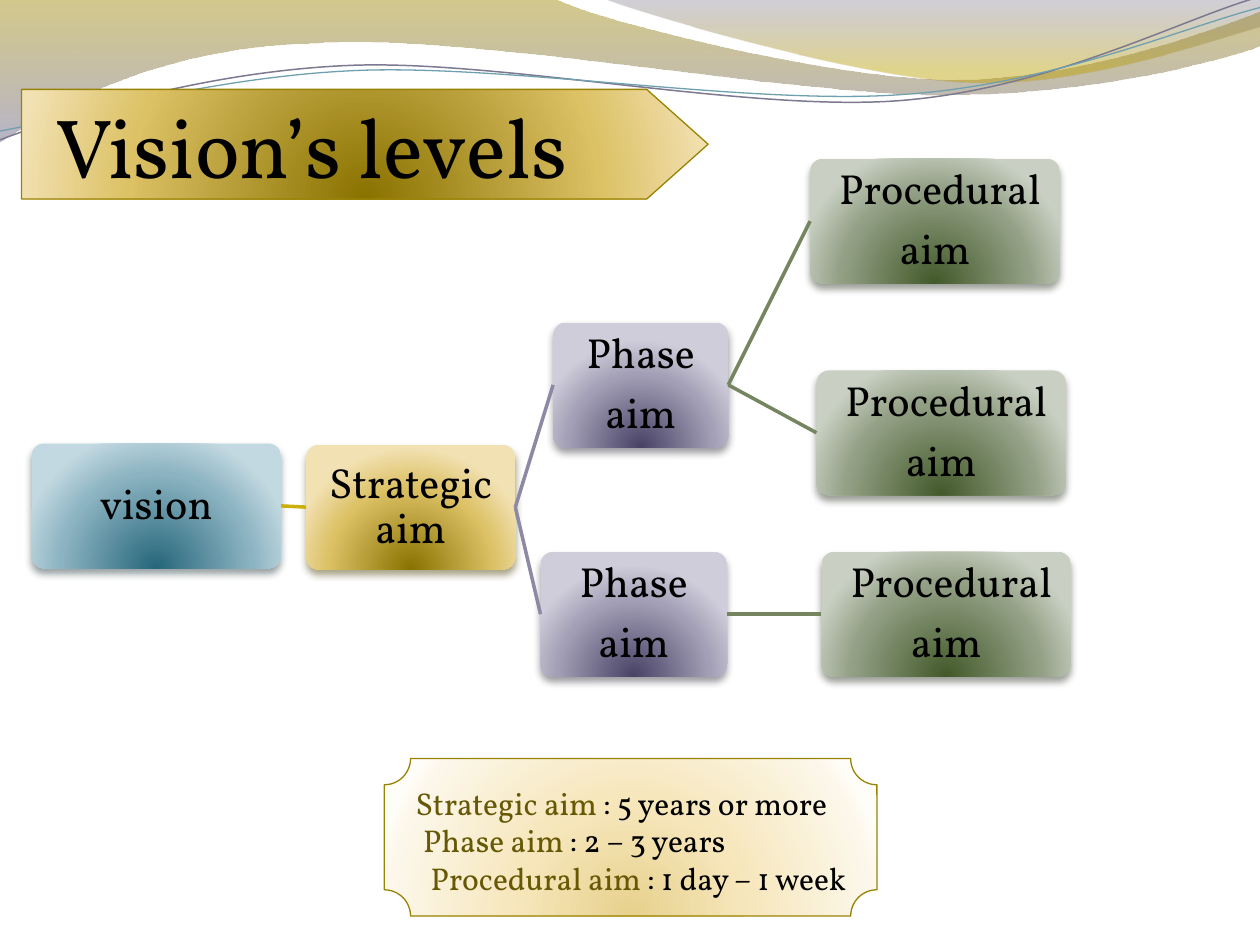
from dataclasses import dataclass

from lxml.etree import SubElement
from pptx import Presentation
from pptx.dml.color import RGBColor
from pptx.enum.shapes import MSO_CONNECTOR, MSO_SHAPE
from pptx.enum.text import MSO_ANCHOR, PP_ALIGN
from pptx.oxml.ns import qn
from pptx.util import Inches, Pt

FONT = "Vollkorn"
BLACK = RGBColor(0x00, 0x00, 0x00)
OLIVE = RGBColor(0x66, 0x58, 0x05)
GOLD_EDGE = RGBColor(0x99, 0x83, 0x05)
WAVE_PURPLE = RGBColor(0x7C, 0x79, 0x91)
WAVE_BLUE = RGBColor(0x6E, 0xA0, 0xB0)
LEFT_SITE, RIGHT_SITE = 1, 3


@dataclass(frozen=True)
class Stop:
    position: int
    color: RGBColor
    opacity: int = 100


@dataclass(frozen=True)
class Theme:
    stops: tuple
    shadow: RGBColor
    link: RGBColor


@dataclass(frozen=True)
class Level:
    name: str
    parent: str
    lines: tuple
    theme: Theme
    left: float
    top: float
    width: float
    indent: float = 0


def make_theme(dark: str, middle: str, light: str, shadow: str, link: str) -> Theme:
    colors = [RGBColor.from_string(value) for value in (dark, middle, light)]
    stops = tuple(Stop(at, color) for at, color in zip((0, 68, 100), colors))
    return Theme(stops, RGBColor.from_string(shadow), RGBColor.from_string(link))


BLUE = make_theme("26667B", "8BB3C1", "C3D9E1", "26383E", "6EA0B0")
GOLD = make_theme("8A7200", "DCC165", "F2E1B2", "493F02", "CCAF0A")
PURPLE = make_theme("484266", "A39FB6", "CFCDDA", "31303A", "8D89A4")
GREEN = make_theme("43592A", "93A085", "C9D0C3", "292F21", "748560")
CREAM_STOPS = (Stop(0, RGBColor(0xE7, 0xD1, 0x8D)), Stop(43, RGBColor(0xF6, 0xE6, 0xBA)),
               Stop(93, RGBColor(0xFC, 0xF7, 0xEA)), Stop(100, RGBColor(0xFF, 0xFD, 0xF7)))
GOLD_WAVE_STOPS = (Stop(0, RGBColor(0x9E, 0x87, 0x00), 45),
                   Stop(100, RGBColor(0x7B, 0x76, 0x9C), 55))
PURPLE_WAVE_STOPS = (Stop(0, RGBColor(0x66, 0x62, 0x7C), 30),
                     Stop(80, RGBColor(0xBD, 0xA1, 0x00), 45))

# Wave outlines: a pair is a line end, six numbers are a cubic curve
GOLD_WAVE = [(0, 0), (4.4, -0.01), (4.76, 0.17, 6.64, 0.63, 7.58, 0.63),
             (8.53, 0.63, 9.58, 0.26, 10, 0.09), (10.01, 0.36),
             (9.83, 0.44, 8.7, 0.76, 7.46, 0.75), (6.22, 0.75, 3.82, 0.28, 2.57, 0.34),
             (1.29, 0.36, 0.46, 0.83, -0.01, 1.13), (0, 0)]
PURPLE_WAVE = [(4.79, -0.01), (5.09, 0.11, 6.82, 0.62, 7.69, 0.65),
               (8.56, 0.69, 9.61, 0.32, 10, 0.21), (10, 0), (4.79, -0.01)]
PURPLE_LINE = [(0, 1.11), (0.48, 0.93, 1.58, 0.57, 2.77, 0.52),
               (3.95, 0.47, 5.93, 0.89, 7.13, 0.8), (8.33, 0.71, 9.38, 0.15, 9.98, -0.02)]
BLUE_LINE = [(0, 1.04), (0.47, 0.96, 1.64, 0.61, 2.83, 0.56),
             (4.03, 0.51, 5.97, 0.84, 7.17, 0.75), (8.36, 0.67, 9.41, 0.21, 10, 0.06)]

PHASE, PROCEDURAL = ("Phase", "aim"), ("Procedural", "aim")
LEVELS = [
    Level("vision", "", ("vision",), BLUE, 0.25, 3.52, 1.98),
    Level("strategic", "vision", ("Strategic aim",), GOLD, 2.43, 3.53, 1.66),
    Level("phase 1", "strategic", PHASE, PURPLE, 4.39, 2.56, 1.39),
    Level("procedural 1", "phase 1", PROCEDURAL, GREEN, 6.43, 1.26, 1.98, 0.08),
    Level("procedural 2", "phase 1", PROCEDURAL, GREEN, 6.48, 2.94, 1.98, 0.08),
    Level("phase 2", "strategic", PHASE, PURPLE, 4.29, 4.38, 1.48),
    Level("procedural 3", "phase 2", PROCEDURAL, GREEN, 6.52, 4.38, 1.98, 0.08),
]
LEVEL_HEIGHT = 0.99
LEGEND = [("Strategic aim ", ": 5 years or more"), ("Phase aim ", ": 2 – 3 years"),
          ("Procedural aim ", ": 1 day – 1 week")]


def add_color(parent, color: RGBColor, opacity: int) -> None:
    node = SubElement(parent, qn("a:srgbClr"), val=str(color))
    if opacity < 100:
        SubElement(node, qn("a:alpha"), val=str(opacity * 1000))


def fill_gradient(shape, stops: tuple, radial: bool = True) -> None:
    shape.fill.solid()
    solid = shape._element.spPr.find(qn("a:solidFill"))
    gradient = solid.makeelement(qn("a:gradFill"), rotWithShape="1")
    stop_list = SubElement(gradient, qn("a:gsLst"))
    for stop in stops:
        node = SubElement(stop_list, qn("a:gs"), pos=str(stop.position * 1000))
        add_color(node, stop.color, stop.opacity)
    if radial:
        center = SubElement(gradient, qn("a:path"), path="circle")
        SubElement(center, qn("a:fillToRect"), l="50000", t="130000", r="50000", b="-30000")
    else:
        SubElement(gradient, qn("a:lin"), ang="5400000", scaled="1")
    solid.getparent().replace(solid, gradient)


def set_line(shape, color: RGBColor | None, width: float = 0.75) -> None:
    if color is None:
        shape.line.fill.background()
    else:
        shape.line.color.rgb = color
        shape.line.width = Pt(width)


def add_shadow(shape, color: RGBColor) -> None:
    effects = shape._element.spPr.find(qn("a:effectLst"))
    shadow = SubElement(effects, qn("a:outerShdw"), blurRad=str(Pt(4.5)), dist=str(Pt(3)),
                        dir="5400000", rotWithShape="0")
    add_color(shadow, color, 48)


def bend_segments(wave, outline: list) -> None:
    """Join the three straight steps of each curve into one cubic curve."""
    segments = iter(list(wave._element.iter(qn("a:lnTo"))))
    for piece in outline[1:]:
        first = next(segments)
        if len(piece) == 2:
            continue
        curve = first.makeelement(qn("a:cubicBezTo"))
        first.addprevious(curve)
        for segment in (first, next(segments), next(segments)):
            curve.append(segment[0])
            segment.getparent().remove(segment)


def add_wave(page, outline: list, stops: tuple = (), color: RGBColor | None = None,
             width: float = 0.75) -> None:
    points = [(Inches(piece[at]), Inches(piece[at + 1]))
              for piece in outline for at in range(0, len(piece), 2)]
    builder = page.shapes.build_freeform(*points[0])
    builder.add_line_segments(points[1:], close=bool(stops))
    wave = builder.convert_to_shape()
    bend_segments(wave, outline)
    wave.shadow.inherit = False
    if stops:
        fill_gradient(wave, stops, radial=False)
    else:
        wave.fill.background()
    set_line(wave, color, width)


def add_panel(page, preset, area: tuple, stops: tuple, edge: RGBColor | None = None,
              adjust: float | None = None):
    box = page.shapes.add_shape(preset, *map(Inches, area))
    box.shadow.inherit = False
    fill_gradient(box, stops)
    set_line(box, edge)
    if adjust is not None:
        box.adjustments[0] = adjust
    return box


def write(para, text: str, *, size: float, color: RGBColor = BLACK, align=PP_ALIGN.LEFT,
          indent: float = 0) -> None:
    para.alignment = align
    if indent:
        para._p.get_or_add_pPr().set("marL", str(Inches(indent)))
    span = para.add_run()
    span.text = text
    span.font.name, span.font.size, span.font.color.rgb = FONT, Pt(size), color


def add_paragraph(frame, index: int):
    return frame.add_paragraph() if index else frame.paragraphs[0]


def add_text_box(page, area: tuple):
    frame = page.shapes.add_textbox(*map(Inches, area)).text_frame
    frame.word_wrap = True
    return frame


def add_level(page, level: Level):
    area = (level.left, level.top, level.width, LEVEL_HEIGHT)
    box = add_panel(page, MSO_SHAPE.ROUNDED_RECTANGLE, area, level.theme.stops, adjust=0.1)
    add_shadow(box, level.theme.shadow)
    frame = box.text_frame
    frame.word_wrap, frame.vertical_anchor = True, MSO_ANCHOR.MIDDLE
    frame.margin_left = frame.margin_right = frame.margin_top = frame.margin_bottom = Inches(0.02)
    for index, line in enumerate(level.lines):
        para = add_paragraph(frame, index)
        para.line_spacing, para.space_after = 0.9, Pt(8.4)
        write(para, line, size=24, align=PP_ALIGN.CENTER, indent=0 if index else level.indent)
    return box


def add_link(page, parent, child, color: RGBColor) -> None:
    link = page.shapes.add_connector(MSO_CONNECTOR.STRAIGHT, 0, 0, 0, 0)
    link.begin_connect(parent, RIGHT_SITE)
    link.end_connect(child, LEFT_SITE)
    set_line(link, color, 2)
    SubElement(link._element.spPr, qn("a:effectLst"))


def main() -> None:
    deck = Presentation()
    deck.slide_width, deck.slide_height = Inches(10), Inches(7.5)
    page = deck.slides.add_slide(deck.slide_layouts[6])

    # Waves along the top
    add_wave(page, GOLD_WAVE, stops=GOLD_WAVE_STOPS)
    add_wave(page, PURPLE_WAVE, stops=PURPLE_WAVE_STOPS)
    add_wave(page, PURPLE_LINE, color=WAVE_PURPLE, width=0.85)
    add_wave(page, BLUE_LINE, color=WAVE_BLUE)

    # Tree of levels
    boxes = {}
    for level in LEVELS:
        boxes[level.name] = add_level(page, level)
        if level.parent:
            add_link(page, boxes[level.parent], boxes[level.name], level.theme.link)

    # Legend with stepped lines
    add_panel(page, MSO_SHAPE.PLAQUE, (3.05, 6.02, 3.91, 1.25), CREAM_STOPS, GOLD_EDGE)
    frame = add_text_box(page, (3.2, 6.17, 3.75, 1.01))
    for index, (term, duration) in enumerate(LEGEND):
        para = add_paragraph(frame, index)
        write(para, term, size=18, color=OLIVE, indent=0.06 * index)
        write(para, duration, size=18)

    # Title on its arrow
    add_panel(page, MSO_SHAPE.PENTAGON, (0.17, 0.71, 5.45, 0.87), GOLD.stops, GOLD_EDGE, 0.56)
    title = add_text_box(page, (0.17, 0.7, 4.69, 0.87))
    write(title.paragraphs[0], "Vision’s levels", size=48, indent=0.17)

    deck.save("out.pptx")


if __name__ == "__main__":
    main()
